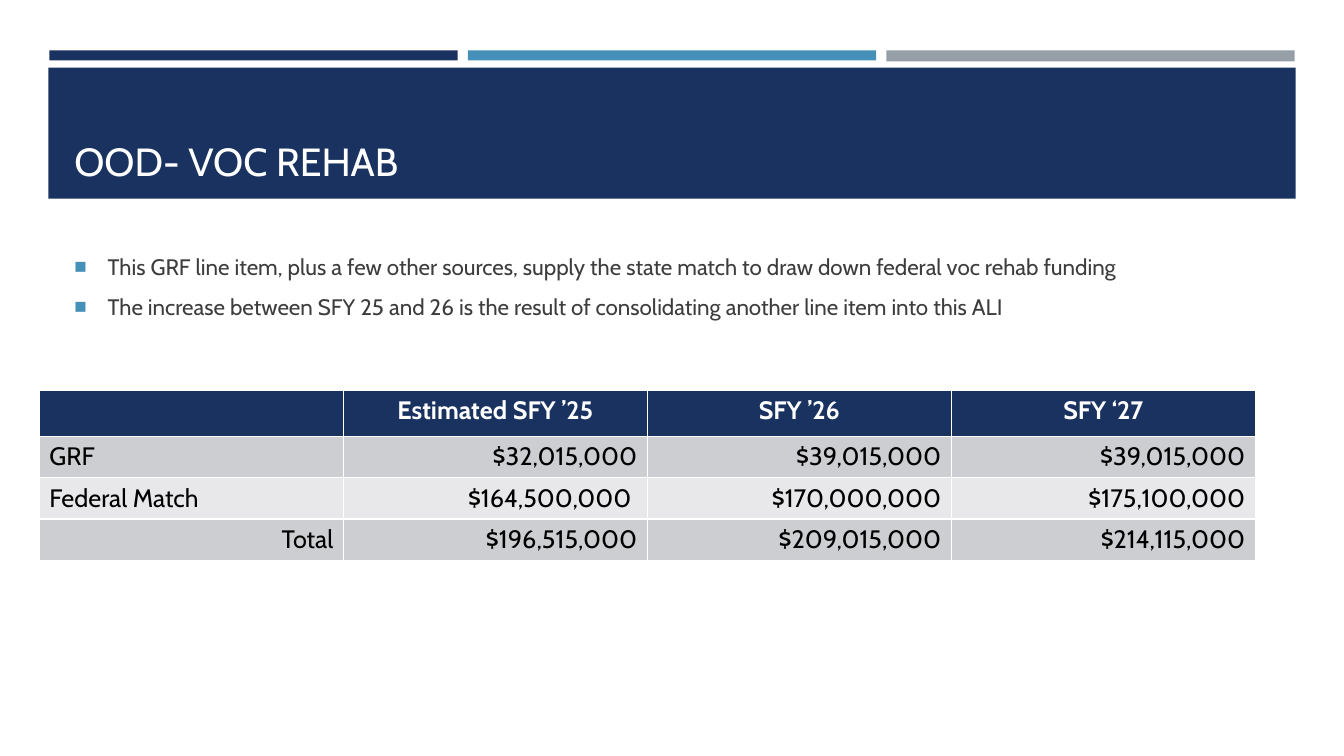
"""Build the OOD vocational rehabilitation funding slide."""
from lxml import etree
from pptx import Presentation
from pptx.dml.color import RGBColor
from pptx.enum.shapes import MSO_SHAPE
from pptx.enum.text import MSO_ANCHOR, PP_ALIGN
from pptx.oxml.ns import qn
from pptx.util import Inches, Pt

RECTANGLE = MSO_SHAPE.RECTANGLE
BOTTOM, MIDDLE = MSO_ANCHOR.BOTTOM, MSO_ANCHOR.MIDDLE
LEFT, CENTER, RIGHT = PP_ALIGN.LEFT, PP_ALIGN.CENTER, PP_ALIGN.RIGHT

TITLE = "OOD- VOC REHAB"
BULLETS = [
    "This GRF line item, plus a few other sources, supply the state match to draw down federal voc rehab funding",
    "The increase between SFY 25 and 26 is the result of consolidating another line item into this ALI",
]
FUNDING = [
    ("", "Estimated SFY ’25", "SFY ’26", "SFY ‘27"),
    ("GRF", "$32,015,000", "$39,015,000", "$39,015,000"),
    ("Federal Match", "$164,500,000 ", "$170,000,000", "$175,100,000"),
    ("Total", "$196,515,000", "$209,015,000", "$214,115,000"),
]
COLORS = {
    "navy": "1A3260", "blue": "4590B8", "gray": "969FA7", "white": "FFFFFF",
    "body": "3D3D3D", "black": "000000", "odd": "CDCED2", "even": "E8E8EA",
}
BARS = [("navy", 0.1), ("blue", 0.1), ("gray", 0.11)]
BAR_LEFT, BAR_STEP = 0.49, 4.15
FONT = "Cabin"
COLUMN_WIDTH, HEADER_HEIGHT, ROW_HEIGHT = 3.015, 0.46, 0.41


def color(name):
    return RGBColor.from_string(COLORS[name])


def add_rectangle(slide, left, top, width, height, fill):
    shape = slide.shapes.add_shape(
        RECTANGLE, Inches(left), Inches(top), Inches(width), Inches(height))
    shape.shadow.inherit = False
    shape.fill.solid()
    shape.fill.fore_color.rgb = color(fill)
    shape.line.fill.background()


def add_text_frame(slide, top, height, anchor):
    box = slide.shapes.add_textbox(Inches(0.64), Inches(top), Inches(12.06), Inches(height))
    box.text_frame.word_wrap = True
    box.text_frame.vertical_anchor = anchor
    return box.text_frame


def write(paragraph, text, size, font_color, bold=False):
    paragraph.text = text
    font = paragraph.font
    font.name, font.size, font.bold = FONT, Pt(size), bold
    font.color.rgb = color(font_color)


def add_bullet(paragraph):
    properties = paragraph._p.get_or_add_pPr()
    properties.set("marL", str(Inches(0.33)))
    properties.set("indent", str(-Inches(0.33)))
    bullet_color = etree.Element(qn("a:buClr"))
    etree.SubElement(bullet_color, qn("a:srgbClr"), val=COLORS["blue"])
    bullet_parts = [
        bullet_color,
        etree.Element(qn("a:buSzPct"), val="92000"),
        etree.Element(qn("a:buFont"), typeface="Arial"),
        etree.Element(qn("a:buChar"), char="■"),
    ]
    font_properties = properties.find(qn("a:defRPr"))
    for part in bullet_parts:
        font_properties.addprevious(part)


def add_bullets(slide):
    frame = add_text_frame(slide, 2.38, 0.92, MIDDLE)
    for index, text in enumerate(BULLETS):
        paragraph = frame.add_paragraph() if index else frame.paragraphs[0]
        write(paragraph, text, 16, "body")
        paragraph.space_before, paragraph.space_after = Pt(3.2), Pt(6)
        add_bullet(paragraph)


def add_funding_table(slide):
    row_count, column_count = len(FUNDING), len(FUNDING[0])
    height = HEADER_HEIGHT + ROW_HEIGHT * (row_count - 1)
    table = slide.shapes.add_table(
        row_count, column_count, Inches(0.39), Inches(3.87),
        Inches(COLUMN_WIDTH * column_count), Inches(height)).table
    for column in table.columns:
        column.width = Inches(COLUMN_WIDTH)
    for row_index, values in enumerate(FUNDING):
        header = row_index == 0
        table.rows[row_index].height = Inches(HEADER_HEIGHT if header else ROW_HEIGHT)
        fill = "navy" if header else "odd" if row_index % 2 else "even"
        for column_index, value in enumerate(values):
            cell = table.cell(row_index, column_index)
            cell.fill.solid()
            cell.fill.fore_color.rgb = color(fill)
            paragraph = cell.text_frame.paragraphs[0]
            write(paragraph, value, 18, "white" if header else "black", header)
            if header:
                paragraph.alignment = CENTER
            else:
                paragraph.alignment = RIGHT if column_index or value == "Total" else LEFT


def main():
    presentation = Presentation()
    presentation.slide_width, presentation.slide_height = Inches(13.33), Inches(7.5)
    slide = presentation.slides.add_slide(presentation.slide_layouts[6])
    for index, (fill, height) in enumerate(BARS):
        add_rectangle(slide, BAR_LEFT + index * BAR_STEP, 0.5, 4.05, height, fill)
    add_rectangle(slide, 0.48, 0.67, 12.37, 1.3, "navy")
    title_frame = add_text_frame(slide, 0.77, 1.11, BOTTOM)
    write(title_frame.paragraphs[0], TITLE, 28, "white")
    add_funding_table(slide)
    add_bullets(slide)
    presentation.save("out.pptx")


if __name__ == "__main__":
    main()
